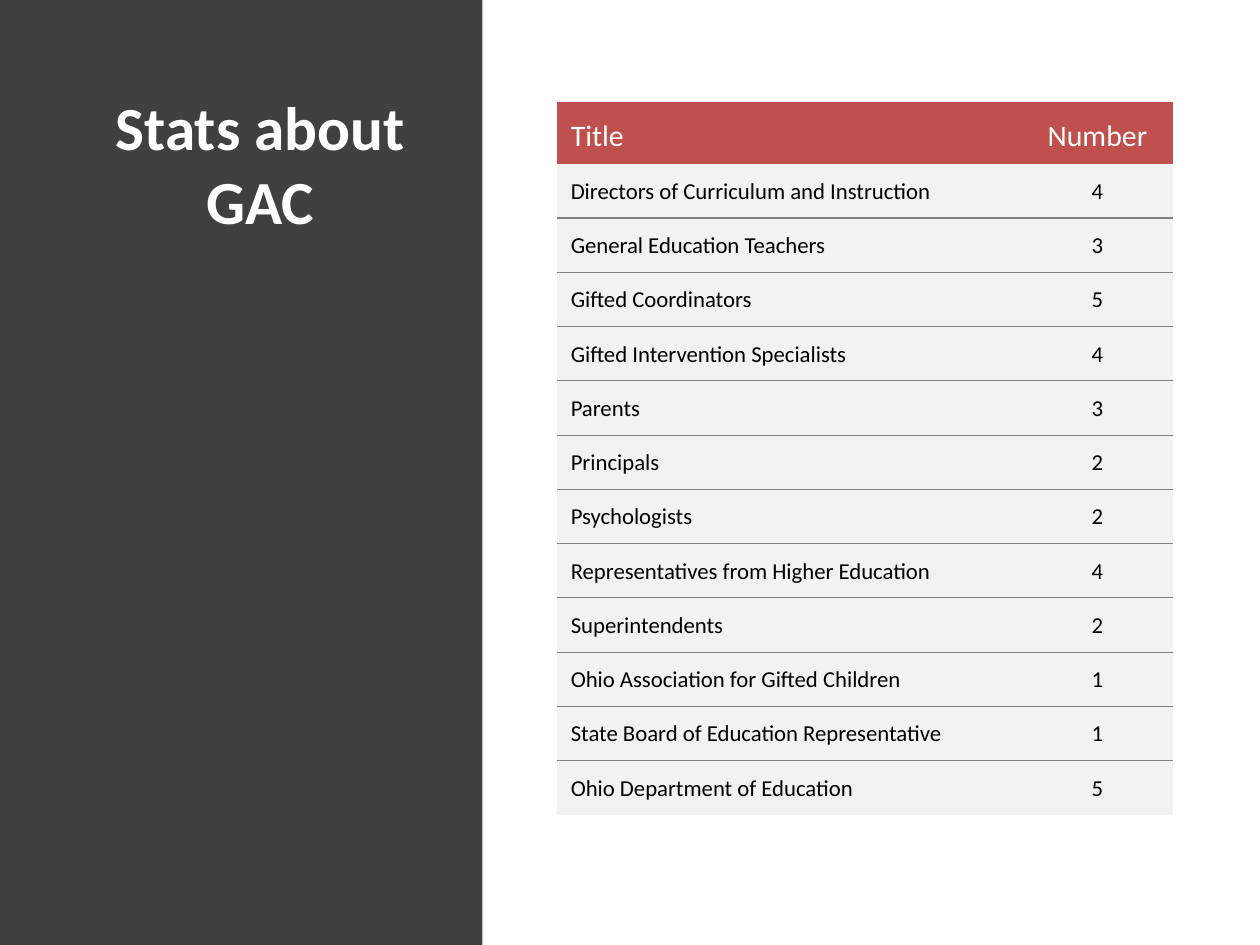
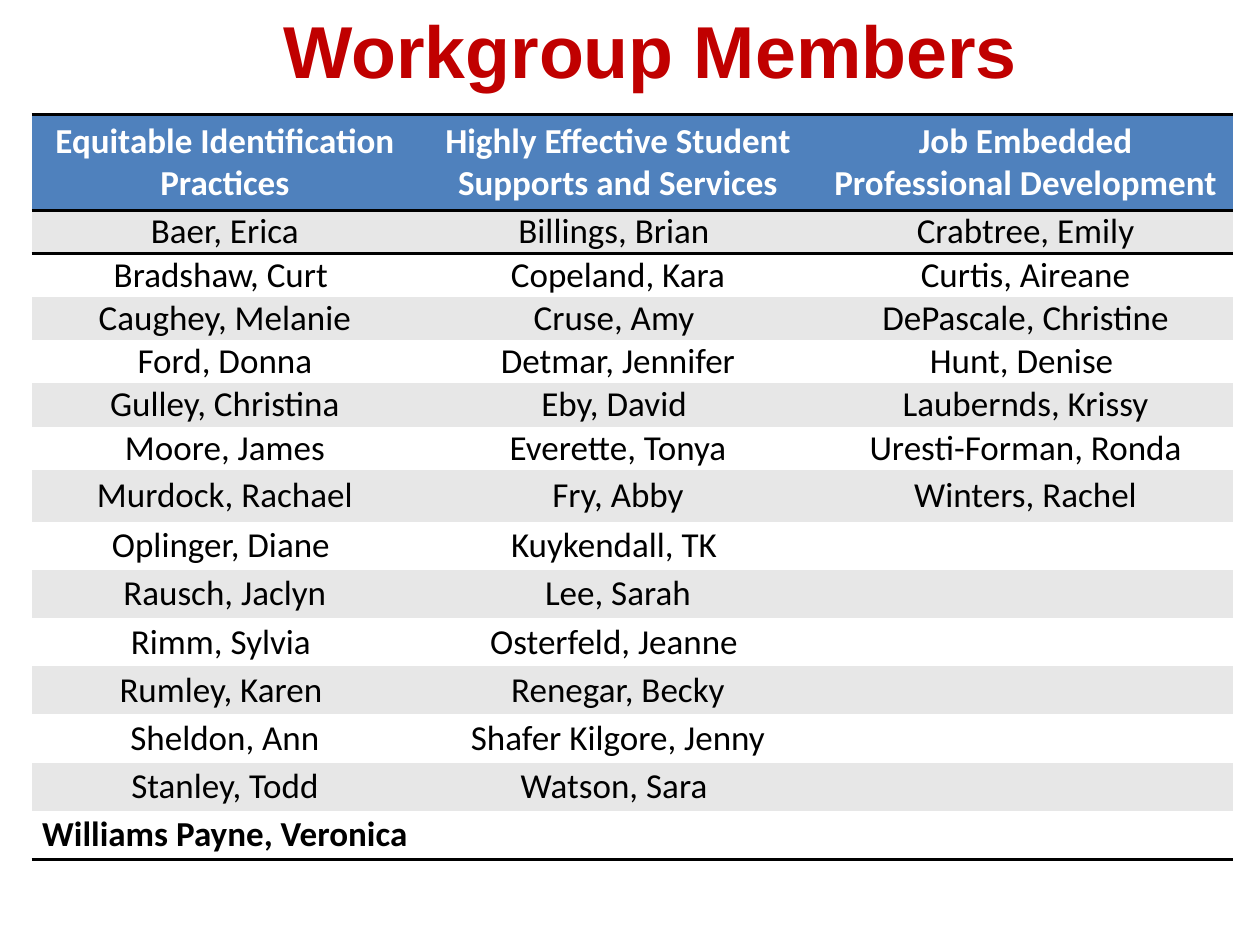
import pptx
import pptx.util
import pptx.dml.color
import pptx.enum.shapes
import pptx.enum.text
import pptx.oxml
import pptx.oxml.ns

ALIGN = pptx.enum.text.PP_ALIGN
ANCHOR = pptx.enum.text.MSO_ANCHOR
PLAIN = "{2D5ABB26-0587-4C30-8999-92F81FD0307C}"  # table style without grid
WHITE, BLACK, GREY = "FFFFFF", "000000", "808080"


def tint(code):
    return pptx.dml.color.RGBColor.from_string(code)


class Deck:
    """Holds the style and the current slide; lengths are grid units."""

    cols, rows = 100, 75

    def __init__(self):
        self.file = pptx.Presentation()
        self.file.slide_width = pptx.util.Inches(10)
        self.file.slide_height = pptx.util.Inches(7.5)

    def page(self):
        self.slide = self.file.slides.add_slide(self.file.slide_layouts[6])

    def across(self, n):
        return round(self.file.slide_width * n / self.cols)

    def down(self, n):
        return round(self.file.slide_height * n / self.rows)

    def place(self, x, y, w, h):
        return self.across(x), self.down(y), self.across(w), self.down(h)

    def band(self, spot, fill):
        band = self.slide.shapes.add_shape(
            pptx.enum.shapes.MSO_SHAPE.RECTANGLE, *self.place(*spot))
        band.shadow.inherit = False
        band.fill.solid()
        band.fill.fore_color.rgb = tint(fill)
        band.line.fill.background()

    def pad(self, target, pads):
        for side, size in zip(("left", "top", "right", "bottom"), pads):
            setattr(target, "margin_" + side, self.across(size))

    def label(self, frame, text, align, color, **form):
        para = frame.paragraphs[0]
        para.alignment = align
        run = para.add_run()
        run.text = text
        run.font.color.rgb = tint(color)
        form["size"] = pptx.util.Pt(form["size"])
        for key, value in form.items():
            setattr(run.font, key, value)

    def title(self, spot, text, pads=(0, 0, 0, 0), **form):
        frame = self.slide.shapes.add_textbox(*self.place(*spot)).text_frame
        frame.word_wrap = True
        frame.vertical_anchor = ANCHOR.TOP
        self.pad(frame, pads)
        self.label(frame, text, ALIGN.CENTER, bold=True, **form)

    def table(self, x, y, wide, high):
        """Adds a plain table with the given column widths and row heights."""
        spot = self.place(x, y, sum(wide), sum(high))
        table = self.slide.shapes.add_table(len(high), len(wide), *spot).table
        table.first_row = table.horz_banding = False
        mark = table._tbl.tblPr.find(pptx.oxml.ns.qn("a:tableStyleId"))
        mark.text = PLAIN
        for col, size in zip(table.columns, wide):
            col.width = self.across(size)
        for row, size in zip(table.rows, high):
            row.height = self.down(size)
        return table

    def cell(self, cell, text, fill, pads, anchor, align, edges, **form):
        """Fills one cell; edges maps a side to its colour and width."""
        self.pad(cell, pads)
        cell.vertical_anchor = anchor
        if text:
            self.label(cell.text_frame, text, align, name="Calibri", **form)
        props = cell._tc.get_or_add_tcPr()
        for side in ("T", "B"):
            if side in edges:
                color, width = edges[side]
                props.append(pptx.oxml.parse_xml(
                    f'<a:ln{side} {pptx.oxml.ns.nsdecls("a")} '
                    f'w="{pptx.util.Pt(width)}"><a:solidFill>'
                    f'<a:srgbClr val="{color}"/></a:solidFill></a:ln{side}>'))
        cell.fill.solid()
        cell.fill.fore_color.rgb = tint(fill)


STATS = [
    ("Title", "Number"),
    ("Directors of Curriculum and Instruction", "4"),
    ("General Education Teachers", "3"),
    ("Gifted Coordinators", "5"),
    ("Gifted Intervention Specialists", "4"),
    ("Parents", "3"),
    ("Principals", "2"),
    ("Psychologists", "2"),
    ("Representatives from Higher Education", "4"),
    ("Superintendents", "2"),
    ("Ohio Association for Gifted Children", "1"),
    ("State Board of Education Representative", "1"),
    ("Ohio Department of Education", "5"),
]

GROUPS = [
    ("Equitable Identification Practices",
     "Highly Effective Student Supports and Services",
     "Job Embedded Professional Development"),
    ("Baer, Erica", "Billings, Brian ", "Crabtree, Emily"),
    ("Bradshaw, Curt ", "Copeland, Kara", "Curtis, Aireane"),
    ("Caughey, Melanie", "Cruse, Amy ", "DePascale, Christine"),
    ("Ford, Donna", "Detmar, Jennifer", "Hunt, Denise "),
    ("Gulley, Christina", "Eby, David ", "Laubernds, Krissy"),
    ("Moore, James", "Everette, Tonya", "Uresti-Forman, Ronda"),
    ("Murdock, Rachael", "Fry, Abby", "Winters, Rachel"),
    ("Oplinger, Diane ", "Kuykendall, TK ", ""),
    ("Rausch, Jaclyn", "Lee, Sarah", ""),
    ("Rimm, Sylvia ", "Osterfeld, Jeanne ", ""),
    ("Rumley, Karen ", "Renegar, Becky", ""),
    ("Sheldon, Ann", "Shafer Kilgore, Jenny", ""),
    ("Stanley, Todd", "Watson, Sara ", ""),
    ("Williams Payne, Veronica", "", ""),
]


def stats(deck):
    deck.page()
    # Dark side band with the title
    deck.band((0, 0, 38.3, 75), "404040")
    deck.title((6.9, 6.8, 27.5, 59.2), "Stats about GAC",
               (0.6, 0.3, 0.6, 0.3), color=WHITE, size=35, name="Calibri")
    # Counts, with a thin rule between body rows
    last = len(STATS) - 1
    table = deck.table(44.2, 8.1, (36.9, 12), [4.9] + [51.7 / last] * last)
    for r, row in enumerate(STATS):
        head = r == 0
        edges = {}
        if r > 1:
            edges["T"] = (GREY, 0.75)
        if 0 < r < last:
            edges["B"] = (GREY, 0.75)
        for c, text in enumerate(row):
            deck.cell(table.cell(r, c), text,
                      "C0504D" if head else "F2F2F2", (1.1, 1.1, 1.1, 0.5),
                      ANCHOR.MIDDLE if head else ANCHOR.TOP,
                      ALIGN.CENTER if c else ALIGN.LEFT, edges,
                      color=WHITE if head else BLACK, size=17 if head else 13)


def members(deck):
    deck.page()
    deck.title((6.6, 0.4, 90, 7.1), "Workgroup Members",
               color="C00000", size=42, name="Arial")
    # Names in striped rows, with heavy rules round the head and at the foot
    last = len(GROUPS) - 1
    high = [7.6] + [20.6 / 6] * 6 + [4.1] + [26.8 / 7] * 7
    table = deck.table(2.5, 9.1, (30.7, 31.7, 33), high)
    rule = (BLACK, 2)
    lines = {0: {"T": rule, "B": rule}, 1: {"T": rule}, last: {"B": rule}}
    for r, row in enumerate(GROUPS):
        head = r == 0
        fill = "4F81BD" if head else "E7E7E7" if r % 2 else WHITE
        for c, text in enumerate(row):
            deck.cell(table.cell(r, c), text, fill,
                      (0.8, 0.4, 0.8, 0.4) if head else (0, 0, 0, 0),
                      ANCHOR.TOP if head else ANCHOR.MIDDLE,
                      ALIGN.CENTER, lines.get(r, {}), size=20,
                      color=WHITE if head else BLACK, bold=r in (0, last))


def main():
    deck = Deck()
    stats(deck)
    members(deck)
    deck.file.save("out.pptx")


if __name__ == "__main__":
    main()
